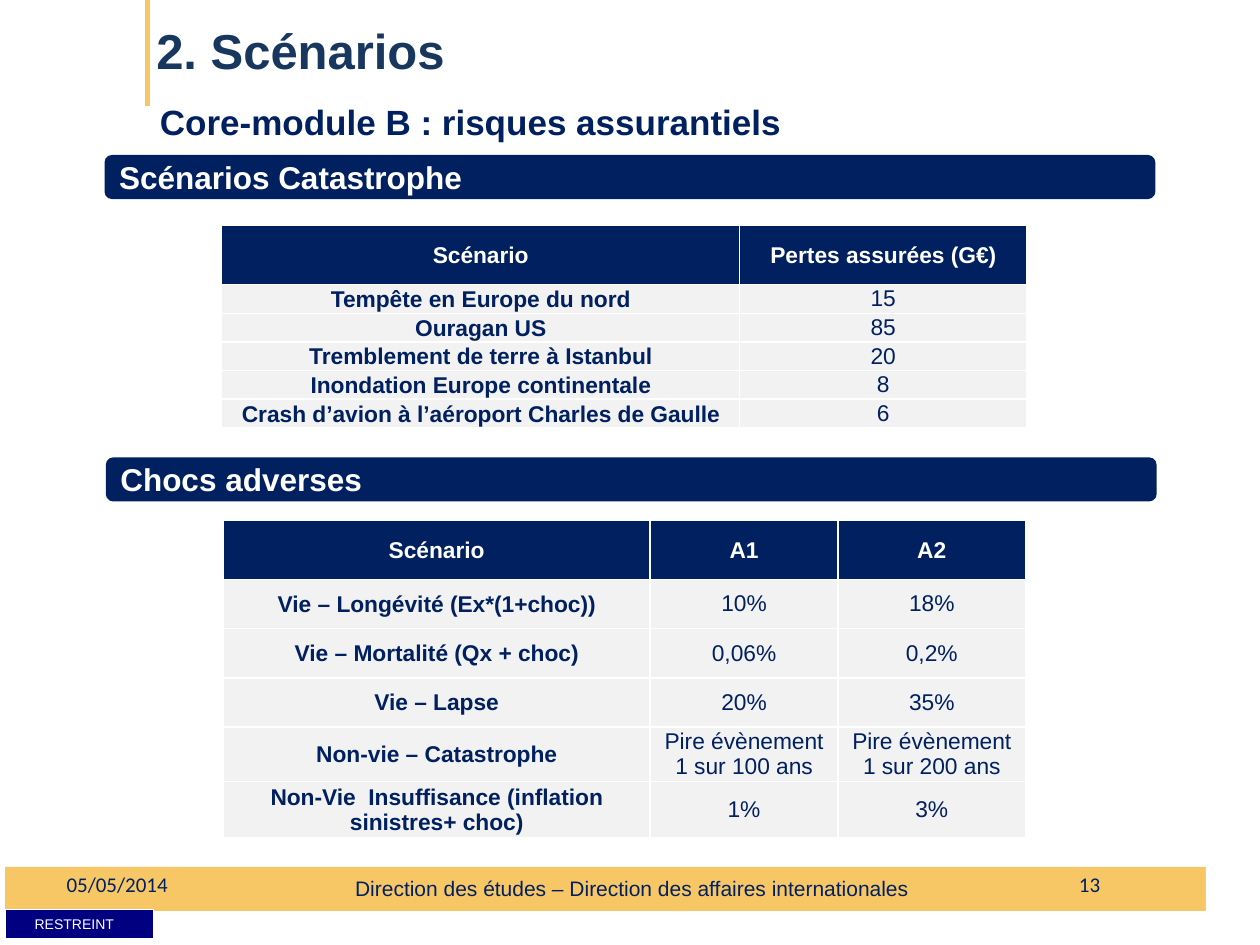
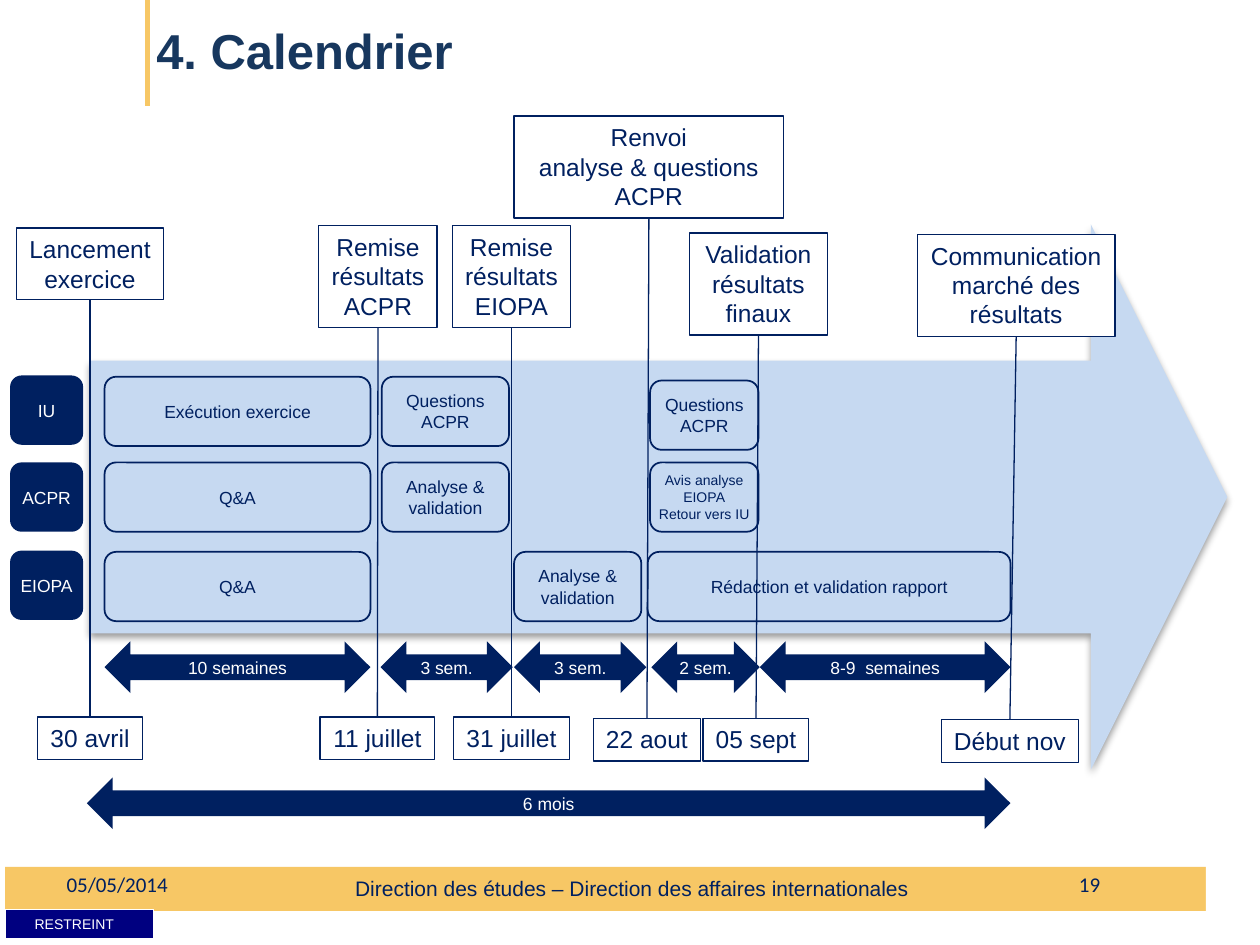
import pptx
import pptx.dml.color
import pptx.enum.shapes
import pptx.enum.text
import pptx.oxml
import pptx.oxml.ns
import pptx.util
from lxml import etree

Inches = pptx.util.Inches
Pt = pptx.util.Pt
RGBColor = pptx.dml.color.RGBColor
SHAPES = pptx.enum.shapes.MSO_SHAPE
ALIGN = pptx.enum.text.PP_ALIGN
ANCHOR = pptx.enum.text.MSO_ANCHOR
qn = pptx.oxml.ns.qn

# Shared colours
NAVY = RGBColor(0x00, 0x20, 0x60)
TITLE_BLUE = RGBColor(0x17, 0x37, 0x5E)
BADGE_BLUE = RGBColor(0x00, 0x00, 0x80)
PALE_BLUE = RGBColor(0xC6, 0xD9, 0xF1)
GOLD = RGBColor(0xF7, 0xC7, 0x65)
GREY = RGBColor(0xF2, 0xF2, 0xF2)
WHITE = RGBColor(0xFF, 0xFF, 0xFF)

# Slide 1 tables
CATASTROPHES = [
    ("Scénario", "Pertes assurées (G€)"),
    ("Tempête en Europe du nord", "15"),
    ("Ouragan US", "85"),
    ("Tremblement de terre à Istanbul", "20"),
    ("Inondation Europe continentale", "8"),
    ("Crash d’avion à l’aéroport Charles de Gaulle", "6"),
]
ADVERSE_SHOCKS = [
    ("Scénario", "A1", "A2"),
    ("Vie – Longévité (Ex*(1+choc))", "10%", "18%"),
    ("Vie – Mortalité (Qx + choc)", "0,06%", "0,2%"),
    ("Vie – Lapse", "20%", "35%"),
    ("Non-vie – Catastrophe", "Pire évènement 1 sur 100 ans", "Pire évènement 1 sur 200 ans"),
    ("Non-Vie  Insuffisance (inflation sinistres+ choc)", "1%", "3%"),
]

# Slide 2: label, its place, whether it wraps; date, its left, top and width
MILESTONES = [
    ("Lancement\nexercice", (0.13, 1.81, 1.17, 0.57), False, "30 avril", 0.3, 5.69, 0.83),
    ("Remise\nrésultats\nACPR", (2.53, 1.79, 0.94, 0.81), False, "11 juillet", 2.54, 5.69, 0.91),
    ("Remise\nrésultats\nEIOPA", (3.59, 1.79, 0.94, 0.81), False, "31 juillet", 3.6, 5.69, 0.92),
    ("Renvoi\nanalyse & questions\nACPR", (4.08, 0.92, 2.14, 0.81), True, "22 aout", 4.71, 5.7, 0.85),
    ("Validation résultats finaux", (5.47, 1.85, 1.1, 0.81), True, "05 sept", 5.58, 5.7, 0.84),
    ("Communication marché des résultats", (7.28, 1.86, 1.57, 0.81), True,
     "Début nov", 7.47, 5.71, 1.09),
]
# Each actor: row top, then tasks as text, left, width, drop below the row, size
ACTORS = [
    ("IU", 2.98, [("Exécution exercice", 0.83, 2.11, 0.01, 10),
                  ("Questions ACPR", 3.03, 1.01, 0.01, 10),
                  ("Questions ACPR", 5.16, 0.86, 0.04, 10)]),
    ("ACPR", 3.67, [("Q&A", 0.83, 2.11, 0, 10),
                    ("Analyse & validation", 3.03, 1.01, 0, 10),
                    ("Avis analyse EIOPA\nRetour vers IU", 5.16, 0.86, 0, 8)]),
    ("EIOPA", 4.37, [("Q&A", 0.83, 2.11, 0.01, 10),
                     ("Analyse & validation", 4.08, 1.01, 0.01, 10),
                     ("Rédaction et validation rapport", 5.14, 2.88, 0.01, 10)]),
]
DURATIONS = [
    ("10 semaines", 0.83, 5.09, 2.11),
    ("3 sem.", 3.02, 5.09, 1.05),
    ("3 sem.", 4.08, 5.09, 1.05),
    ("2 sem.", 5.17, 5.09, 0.86),
    ("8-9  semaines", 6.03, 5.09, 1.99),
    ("6 mois", 0.69, 6.17, 7.33),
]


def write(frame, text, size, color, bold=False, align=ALIGN.CENTER, font="Arial"):
    frame.text = text
    for para in frame.paragraphs:
        para.alignment = align
        para.font.name = font
        para.font.size = Pt(size)
        para.font.bold = bold
        para.font.color.rgb = color


def place(values):
    return [Inches(value) for value in values]


def set_margins(target, left, top, right, bottom):
    target.margin_left, target.margin_top, target.margin_right, target.margin_bottom = place(
        (left, top, right, bottom))


def add_text(page, text, at, size, color=NAVY, anchor=ANCHOR.TOP, **style):
    frame = page.shapes.add_textbox(*place(at)).text_frame
    frame.word_wrap = True
    frame.vertical_anchor = anchor
    write(frame, text, size, color, **style)


def add_box(page, kind, at, fill=None, line=None, width=0.75):
    box = page.shapes.add_shape(kind, *place(at))
    box.shadow.inherit = False
    if fill is None:
        box.fill.background()
    else:
        box.fill.solid()
        box.fill.fore_color.rgb = fill
    if line is None:
        box.line.fill.background()
    else:
        box.line.color.rgb = line
        box.line.width = Pt(width)
    box.text_frame.word_wrap = True
    box.text_frame.vertical_anchor = ANCHOR.MIDDLE
    return box


def add_line(page, start, end, color, width):
    line = page.shapes.add_connector(
        pptx.enum.shapes.MSO_CONNECTOR.STRAIGHT, *place(start + end))
    line.line.color.rgb = color
    line.line.width = Pt(width)
    etree.SubElement(line._element.spPr, qn("a:effectLst"))


def add_cell_borders(cell):
    properties = cell._tc.get_or_add_tcPr()
    for index, side in enumerate(("lnL", "lnR", "lnT", "lnB")):
        border = etree.Element(qn("a:" + side), w=str(Pt(1)))
        fill = etree.SubElement(border, qn("a:solidFill"))
        etree.SubElement(fill, qn("a:srgbClr"), val=str(WHITE))
        properties.insert(index, border)


def add_grid(page, left, top, widths, heights):
    at = place((left, top, sum(widths), sum(heights)))
    table = page.shapes.add_table(len(heights), len(widths), *at).table
    for column, width in zip(table.columns, widths):
        column.width = Inches(width)
    for row, height in zip(table.rows, heights):
        row.height = Inches(height)
    return table


def fill_cell(cell, text, size, color, fill, bold=False):
    cell.fill.solid()
    cell.fill.fore_color.rgb = fill
    cell.vertical_anchor = ANCHOR.MIDDLE
    write(cell.text_frame, text, size, color, bold)


def add_scenario_table(page, left, top, widths, heights, rows):
    table = add_grid(page, left, top, widths, heights)
    for r, row in enumerate(rows):
        for c, text in enumerate(row):
            cell = table.cell(r, c)
            is_header = r == 0
            is_label = is_header or c == 0
            fill_cell(cell, text, 13, WHITE if is_header else NAVY,
                      NAVY if is_header else GREY, is_label)
            set_margins(cell, *((0.01, 0.01, 0.01, 0) if is_label else (0.05, 0, 0.05, 0)))
            add_cell_borders(cell)


def add_page(deck, title, number):
    page = deck.slides.add_slide(deck.slide_layouts[5])
    # Footer band, classification badge and title rule
    add_box(page, SHAPES.RECTANGLE, (0.04, 6.88, 9.76, 0.35), GOLD)
    badge = add_grid(page, 0.04, 7.22, [1.18], [0.23]).cell(0, 0)
    fill_cell(badge, "RESTREINT", 8, WHITE, BADGE_BLUE)
    set_margins(badge, 0.1, 0.05, 0.18, 0.05)
    add_text(page, "Direction des études – Direction des affaires internationales",
             (2.72, 6.9, 4.72, 0.55), 12, align=ALIGN.LEFT)
    add_line(page, (1.17, 0), (1.17, 0.84), GOLD, 2.75)
    add_box(page, SHAPES.RECTANGLE, (9.57, 6.74, 0.28, 0.66), WHITE)
    for text, left, align in (("05/05/2014", 0.43, ALIGN.LEFT), (number, 6.5, ALIGN.RIGHT)):
        add_text(page, text, (left, 6.82, 2.33, 0.4), 12, anchor=ANCHOR.MIDDLE,
                 align=align, font="Calibri")
    # Title
    heading = page.shapes.title
    heading.left, heading.top, heading.width, heading.height = place((1.14, -0.03, 8.74, 0.86))
    heading.text_frame.vertical_anchor = ANCHOR.MIDDLE
    write(heading.text_frame, title, 28, TITLE_BLUE, True, ALIGN.LEFT)
    return page


def add_section_band(page, text, left, top):
    band = add_box(page, SHAPES.ROUNDED_RECTANGLE, (left, top, 8.34, 0.35), NAVY)
    write(band.text_frame, text, 18, WHITE, True, ALIGN.LEFT)


def add_framed_label(page, text, at, wrap):
    box = add_box(page, SHAPES.RECTANGLE, at, WHITE, NAVY)
    frame = box.text_frame
    frame.word_wrap = wrap
    frame.vertical_anchor = ANCHOR.TOP
    frame.auto_size = pptx.enum.text.MSO_AUTO_SIZE.SHAPE_TO_FIT_TEXT
    write(frame, text, 14, NAVY)


def add_milestone(page, label, at, wrap, date, date_left, date_top, date_width):
    left, top, width, height = at
    add_line(page, (left + width / 2, top + height),
             (date_left + date_width / 2, date_top), NAVY, 0.75)
    add_framed_label(page, label, at, wrap)
    add_framed_label(page, date, (date_left, date_top, date_width, 0.34), False)


def add_round_box(page, text, at, size, color, **look):
    box = add_box(page, SHAPES.ROUNDED_RECTANGLE, at, **look)
    set_margins(box.text_frame, 0, 0, 0, 0)
    write(box.text_frame, text, size, color)


def add_timeline_arrow(page):
    arrow = add_box(page, SHAPES.RIGHT_ARROW, (0.72, 1.78, 9.02, 4.33), PALE_BLUE)
    arrow.adjustments[1] = 0.25
    effects = arrow._element.spPr.find(qn("a:effectLst"))
    shadow = etree.SubElement(effects, qn("a:outerShdw"), blurRad=str(Pt(4)),
                              dist=str(Pt(3)), dir="5400000", rotWithShape="0")
    tint = etree.SubElement(shadow, qn("a:srgbClr"), val="000000")
    etree.SubElement(tint, qn("a:alpha"), val="40000")


def build_scenarios(deck):
    page = add_page(deck, "2. Scénarios", "13")
    add_text(page, "Core-module B : risques assurantiels", (1.17, 0.75, 7.95, 0.47), 20,
             bold=True, align=ALIGN.LEFT)
    add_section_band(page, "Scénarios Catastrophe", 0.83, 1.23)
    add_scenario_table(page, 1.76, 1.79, [4.11, 2.28], [0.47] + [0.21] * 5, CATASTROPHES)
    add_section_band(page, "Chocs adverses", 0.84, 3.63)
    add_scenario_table(page, 1.77, 4.13, [3.39, 1.49, 1.49],
                       [0.47, 0.39, 0.39, 0.39, 0.4, 0.43], ADVERSE_SHOCKS)


def build_calendar(deck):
    page = add_page(deck, "4. Calendrier", "19")
    add_timeline_arrow(page)
    for milestone in MILESTONES:
        add_milestone(page, *milestone)
    for actor, top, tasks in ACTORS:
        add_round_box(page, actor, (0.08, top, 0.58, 0.55), 10, WHITE, fill=NAVY)
        for text, left, width, drop, size in tasks:
            add_round_box(page, text, (left, top + drop, width, 0.55), size, NAVY,
                          line=NAVY, width=1)
    for text, left, top, width in DURATIONS:
        arrow = add_box(page, SHAPES.LEFT_RIGHT_ARROW, (left, top, width, 0.41), NAVY)
        write(arrow.text_frame, text, 10, WHITE)


def main():
    deck = pptx.Presentation()
    deck.slide_width, deck.slide_height = Inches(10), Inches(7.5)
    build_scenarios(deck)
    build_calendar(deck)
    deck.save("out.pptx")


if __name__ == "__main__":
    main()
